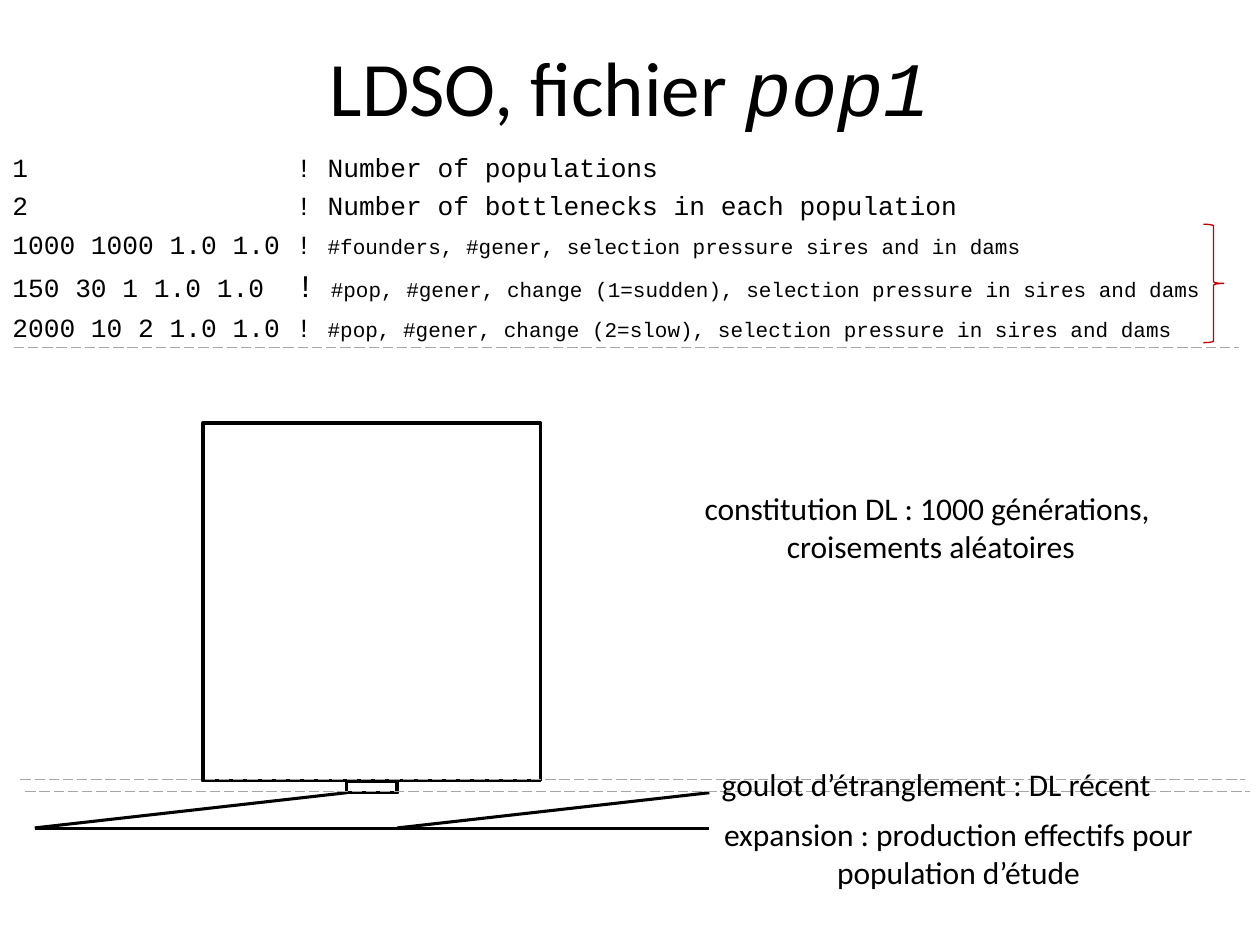
"""Build the LDSO slide: a population parameter file and the diagram it describes."""
from dataclasses import dataclass
from typing import Optional

from lxml.etree import SubElement
from pptx import Presentation
from pptx.dml.color import RGBColor
from pptx.enum.dml import MSO_LINE
from pptx.enum.shapes import MSO_CONNECTOR, MSO_SHAPE
from pptx.enum.text import MSO_ANCHOR, PP_ALIGN
from pptx.oxml.ns import qn
from pptx.util import Cm, Pt

BLACK, GREY, RED = "000000", "A6A6A6", "C00000"
SANS, MONO = "Calibri", "Courier New"
COMMENT_COLUMN = Cm(5.72)
DIVIDER_LENGTH = 24.69
FUNNEL_TOP, FUNNEL_BOTTOM, FUNNEL_RUN = 15.98, 16.69, 6.29


@dataclass
class Box:
    left: float
    top: float
    width: float
    height: float

    def lengths(self) -> tuple:
        """Return the position and size as lengths."""
        return Cm(self.left), Cm(self.top), Cm(self.width), Cm(self.height)


@dataclass
class Stroke:
    color: str
    width: float
    dash: Optional[MSO_LINE] = None


@dataclass
class Line:
    start: tuple[float, float]
    end: tuple[float, float]
    stroke: Stroke


@dataclass
class Outline:
    kind: MSO_SHAPE
    box: Box
    stroke: Stroke


@dataclass
class Label:
    box: Box
    lines: list[str]
    alignment: PP_ALIGN = PP_ALIGN.CENTER


@dataclass
class Parameter:
    values: str
    comment: str
    comment_size: int = 12
    mark_size: int = 15


SOLID = Stroke(BLACK, 1.75)
FRAME = Stroke(BLACK, 2)
DASHED = Stroke(GREY, 0.75, MSO_LINE.LONG_DASH)

PARAMETERS = [
    Parameter("1", "Number of populations", 15),
    Parameter("2", "Number of bottlenecks in each population", 15),
    Parameter("1000 1000 1.0 1.0", "#founders, #gener, selection pressure sires and in dams"),
    Parameter("150 30 1 1.0 1.0", "#pop, #gener, change (1=sudden), selection pressure in sires and dams",
              mark_size=18),
    Parameter("2000 10 2 1.0 1.0", "#pop, #gener, change (2=slow), selection pressure in sires and dams"),
]
FUNNEL_SIDES = [Line((right, FUNNEL_TOP), (right - FUNNEL_RUN, FUNNEL_BOTTOM), SOLID)
                for right in (6.99, 14.3)]
FUNNEL_BASE = Line((0.71, 16.71), (14.3, 16.71), SOLID)
DIVIDERS = [Line((left, y), (left + DIVIDER_LENGTH, y), DASHED)
            for left, y in ((0.28, 7.01), (0.41, 15.72), (0.51, 15.95))]
OUTLINES = [
    Outline(MSO_SHAPE.RECTANGLE, Box(4.09, 8.53, 6.81, 7.21), FRAME),
    Outline(MSO_SHAPE.RECTANGLE, Box(6.99, 15.75, 1.02, 0.23), FRAME),
    Outline(MSO_SHAPE.RIGHT_BRACE, Box(24.26, 4.52, 0.41, 2.39), Stroke(RED, 0.75)),
]
LABELS = [
    Label(Box(13.89, 9.73, 9.75, 1.8),
          ["constitution DL : 1000 générations, ", "croisements aléatoires"]),
    Label(Box(14.3, 15.29, 9.42, 1.02), ["goulot d’étranglement : DL récent"], PP_ALIGN.LEFT),
    Label(Box(14.27, 16.31, 10.11, 1.8),
          ["expansion : production effectifs pour", "population d’étude"]),
]


def color(value: str) -> RGBColor:
    """Turn a hex string into a colour."""
    return RGBColor.from_string(value)


def set_font(font, name: Optional[str] = None, size: Optional[float] = None) -> None:
    """Set a black font with the given name and size."""
    font.color.rgb = color(BLACK)
    if name:
        font.name = name
    if size:
        font.size = Pt(size)


def set_stroke(line, stroke: Stroke) -> None:
    """Apply a stroke to a line format."""
    line.color.rgb = color(stroke.color)
    line.width = Pt(stroke.width)
    if stroke.dash:
        line.dash_style = stroke.dash


def add_frame(slide, box: Box, wrap: bool):
    """Add a text box and return its text frame."""
    frame = slide.shapes.add_textbox(*box.lengths()).text_frame
    frame.word_wrap = wrap
    return frame


def add_run(paragraph, text: str):
    """Append a run and return its font."""
    run = paragraph.add_run()
    run.text = text
    return run.font


def next_paragraph(frame, index: int):
    """Return the first paragraph, or a new one after it."""
    return frame.add_paragraph() if index else frame.paragraphs[0]


def add_title(slide) -> None:
    """Draw the title with its file name in italics."""
    frame = add_frame(slide, Box(1.27, 0.13, 22.86, 3.18), True)
    frame.vertical_anchor = MSO_ANCHOR.MIDDLE
    paragraph = frame.paragraphs[0]
    paragraph.alignment = PP_ALIGN.CENTER
    set_font(paragraph.font, size=44)
    add_run(paragraph, "LDSO, fichier ").name = SANS
    font = add_run(paragraph, "pop1")
    font.name, font.italic = MONO, True


def add_parameters(slide, parameters: list[Parameter]) -> None:
    """Draw the parameter file with its comments in one column."""
    frame = add_frame(slide, Box(0, 2.92, 25.91, 15.39), True)
    for index, parameter in enumerate(parameters):
        paragraph = next_paragraph(frame, index)
        paragraph.space_before = Pt(4)
        tabs = SubElement(paragraph._p.get_or_add_pPr(), qn("a:tabLst"))
        SubElement(tabs, qn("a:tab"), pos=str(int(COMMENT_COLUMN)), algn="l")
        set_font(paragraph.font, MONO)
        for text, size in ((parameter.values + "\t", 15), ("!", parameter.mark_size),
                           (" ", 15), (parameter.comment, parameter.comment_size)):
            add_run(paragraph, text).size = Pt(size)


def add_line(slide, line: Line) -> None:
    """Draw a straight line without a shadow."""
    connector = slide.shapes.add_connector(
        MSO_CONNECTOR.STRAIGHT, *(Cm(value) for value in line.start + line.end))
    set_stroke(connector.line, line.stroke)
    SubElement(connector._element.spPr, qn("a:effectLst"))


def add_outline(slide, outline: Outline) -> None:
    """Draw an unfilled shape."""
    shape = slide.shapes.add_shape(outline.kind, *outline.box.lengths())
    shape.shadow.inherit = False
    shape.fill.background()
    set_stroke(shape.line, outline.stroke)


def add_label(slide, label: Label) -> None:
    """Draw the caption of one stage."""
    frame = add_frame(slide, label.box, False)
    for index, text in enumerate(label.lines):
        paragraph = next_paragraph(frame, index)
        paragraph.alignment = label.alignment
        set_font(paragraph.font, SANS, 18)
        add_run(paragraph, text)


def main() -> None:
    """Build and save the presentation."""
    presentation = Presentation()
    presentation.slide_width, presentation.slide_height = Cm(25.4), Cm(19.05)
    slide = presentation.slides.add_slide(presentation.slide_layouts[6])
    add_title(slide)
    add_parameters(slide, PARAMETERS)
    for outline in OUTLINES:
        add_outline(slide, outline)
    for line in FUNNEL_SIDES + [FUNNEL_BASE] + DIVIDERS:
        add_line(slide, line)
    for label in LABELS:
        add_label(slide, label)
    presentation.save("out.pptx")


if __name__ == "__main__":
    main()
